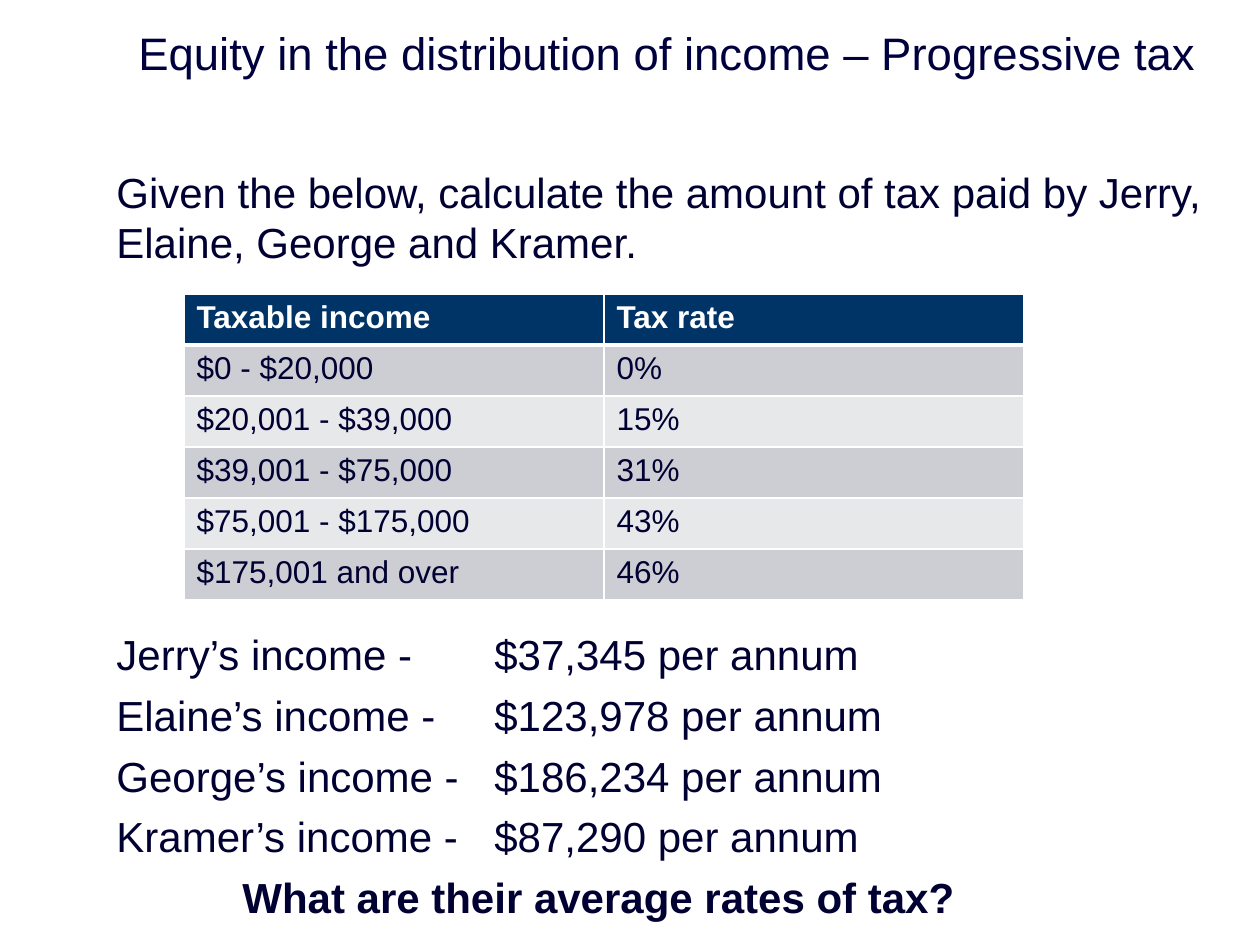
from lxml.etree import SubElement
from pptx import Presentation
from pptx.dml.color import RGBColor
from pptx.enum.text import MSO_ANCHOR
from pptx.oxml.ns import qn
from pptx.util import Pt

EMU_PER_PX = 914400 / 126
COLORS = {
    "title": "00003E",
    "text": "000032",
    "white": "FFFFFF",
    "header": "003366",
    "odd": "CCCED3",
    "even": "E7E8EA",
}
TAX_RATES = [
    ("Taxable income", "Tax rate"),
    ("$0 - $20,000", "0%"),
    ("$20,001 - $39,000", "15%"),
    ("$39,001 - $75,000", "31%"),
    ("$75,001 - $175,000", "43%"),
    ("$175,001 and over", "46%"),
]
INCOMES = [
    ("Jerry", "$37,345"),
    ("Elaine", "$123,978"),
    ("George", "$186,234"),
    ("Kramer", "$87,290"),
]


def px(n):
    return round(n * EMU_PER_PX)


def style(p, size, color, bold=False):
    p.font.name = "Arial"
    p.font.size = Pt(size)
    p.font.bold = bold
    p.font.color.rgb = RGBColor.from_string(COLORS[color])


def add_text(s, box, lines, size, color, anchor=MSO_ANCHOR.TOP):
    """Add a wrapped text box with one paragraph per line and return its paragraphs."""
    tf = s.shapes.add_textbox(*map(px, box)).text_frame
    tf.word_wrap = True
    tf.vertical_anchor = anchor
    tf.text = "\n".join(lines)
    for i, p in enumerate(tf.paragraphs):
        if i:
            p.space_before = Pt(6)
        style(p, size, color)
    return tf.paragraphs


def add_tab_stop(p, pos):
    tabs = SubElement(p._p.get_or_add_pPr(), qn("a:tabLst"))
    SubElement(tabs, qn("a:tab"), pos=str(px(pos)), algn="l")


def add_borders(cell, widths):
    """Draw white borders; widths are in points, in the order left, right, top, bottom."""
    tc_pr = cell._tc.get_or_add_tcPr()
    for side, width in zip("LRTB", widths):
        ln = SubElement(tc_pr, qn(f"a:ln{side}"), w=str(Pt(width)))
        fill = SubElement(ln, qn("a:solidFill"))
        SubElement(fill, qn("a:srgbClr"), val=COLORS["white"])


def add_tax_table(s, left, top, col_width, row_height):
    rows, cols = len(TAX_RATES), len(TAX_RATES[0])
    table = s.shapes.add_table(rows, cols, px(left), px(top),
                               px(cols * col_width), px(rows * row_height)).table
    for r, values in enumerate(TAX_RATES):
        table.rows[r].height = px(row_height)
        fill = "header" if r == 0 else "odd" if r % 2 else "even"
        for c, value in enumerate(values):
            cell = table.cell(r, c)
            cell.text = value
            style(cell.text_frame.paragraphs[0], 18,
                  "text" if r else "white", bold=r == 0)
            add_borders(cell, (1, 1, 3 if r == 1 else 1, 1 if r else 3))
            cell.fill.solid()
            cell.fill.fore_color.rgb = RGBColor.from_string(COLORS[fill])


def add_incomes(s, box):
    lines = [f"{name}’s income -\t{income} per annum" for name, income in INCOMES]
    question = "What are their average rates of tax?"
    *incomes, last = add_text(s, box, lines + [question], 24, "text")
    for p in incomes:
        # The tab list has to come before the font properties.
        p.font._element.getparent().remove(p.font._element)
        add_tab_stop(p, 378)
        style(p, 24, "text")
    last._p.get_or_add_pPr().set("marL", str(px(126)))
    last.font.bold = True


def main():
    prs = Presentation()
    prs.slide_width, prs.slide_height = px(1260), px(945)
    s = prs.slides.add_slide(prs.slide_layouts[6])
    add_text(s, (126, 20, 1134, 64),
             ["Equity in the distribution of income – Progressive tax"],
             26, "title", MSO_ANCHOR.MIDDLE)
    add_text(s, (104, 160, 1113, 110),
             ["Given the below, calculate the amount of tax paid by Jerry, "
              "Elaine, George and Kramer."], 24, "text")
    add_tax_table(s, 184, 294, 420, 51)
    add_incomes(s, (104, 622, 1113, 300))
    prs.save("out.pptx")


if __name__ == "__main__":
    main()
